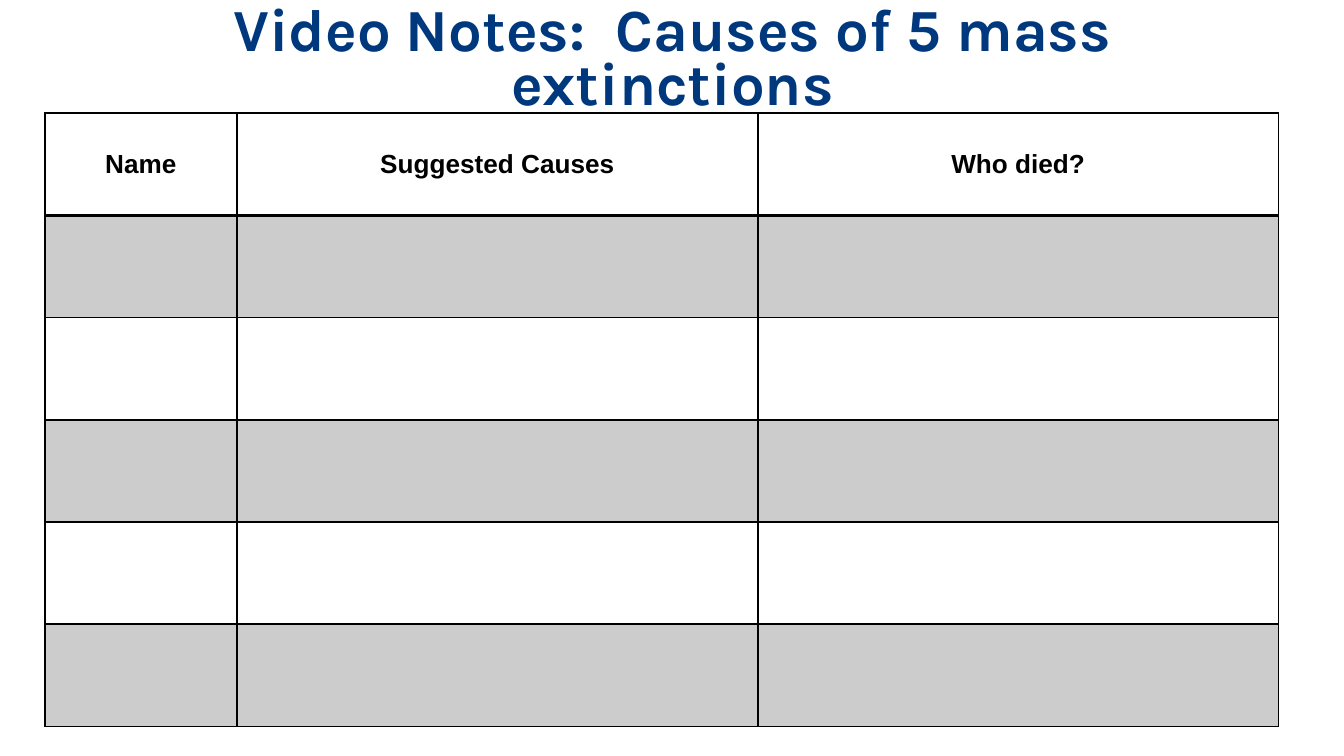
from lxml.etree import SubElement
from pptx import Presentation
from pptx.dml.color import RGBColor
from pptx.enum.text import MSO_ANCHOR as Anchor, PP_ALIGN as Align
from pptx.oxml.ns import qn
from pptx.util import Pt

# Content
TITLE = "Video Notes:  Causes of 5 mass extinctions"
HEADERS = ["Name", "Suggested Causes", "Who died?"]
EXTINCTIONS = 5

# Layout and style
COLORS = {"title": "00387E", "ink": "000000"}
COLUMN_WIDTHS = [103, 279, 279]
ROW_HEIGHT = 54.75
TABLE_LEFT, TABLE_TOP = 24, 60.7
BAND_OPACITY = 20
THIN, THICK = 1, 2


def write(frame, text, font_name, size, color, line_spacing=None):
    para = frame.paragraphs[0]
    para.alignment = Align.CENTER
    para.line_spacing = line_spacing
    span = para.add_run()
    span.text = text
    for name, value in {"name": font_name, "size": Pt(size), "bold": True}.items():
        setattr(span.font, name, value)
    span.font.color.rgb = RGBColor.from_string(COLORS[color])


def draw_borders(cell, widths):
    properties = cell._tc.get_or_add_tcPr()
    for side, width in widths.items():
        line = SubElement(properties, qn(f"a:ln{side}"), w=str(Pt(width)))
        solid = SubElement(line, qn("a:solidFill"))
        SubElement(solid, qn("a:srgbClr"), val=COLORS["ink"])


def shade(cell):
    cell.fill.solid()
    cell.fill.fore_color.rgb = RGBColor.from_string(COLORS["ink"])
    color = cell._tc.tcPr.find(f"{qn('a:solidFill')}/{qn('a:srgbClr')}")
    SubElement(color, qn("a:alpha"), val=str(BAND_OPACITY * 1000))


deck = Presentation()
deck.slide_width, deck.slide_height = Pt(720), Pt(405)
slide = deck.slides.add_slide(deck.slide_layouts[5])

# Title
title = slide.shapes.title
for name, value in {"left": 36.7, "top": 0, "width": 647.3, "height": 67}.items():
    setattr(title, name, Pt(value))
frame = title.text_frame
frame.word_wrap = True
frame.vertical_anchor = Anchor.MIDDLE
for side in ("left", "top", "right", "bottom"):
    setattr(frame, f"margin_{side}", Pt(6))
write(frame, TITLE, "Karla", 32, "title", 0.75)

# Notes table
row_count = EXTINCTIONS + 1
table = slide.shapes.add_table(
    row_count, len(HEADERS), Pt(TABLE_LEFT), Pt(TABLE_TOP),
    Pt(sum(COLUMN_WIDTHS)), Pt(ROW_HEIGHT * row_count)).table
table.first_row = table.horz_banding = False
for column, width in zip(table.columns, COLUMN_WIDTHS):
    column.width = Pt(width)

for row_index, row in enumerate(table.rows):
    row.height = Pt(ROW_HEIGHT)
    for cell in row.cells:
        draw_borders(cell, {"L": THIN, "R": THIN,
                            "T": THICK if row_index == 1 else THIN,
                            "B": THICK if row_index == 0 else THIN})
        if row_index % 2:
            shade(cell)
        else:
            cell.fill.background()

# Header row
for cell, header in zip(table.rows[0].cells, HEADERS):
    cell.vertical_anchor = Anchor.MIDDLE
    write(cell.text_frame, header, "Arial", 14, "ink")

deck.save("out.pptx")
